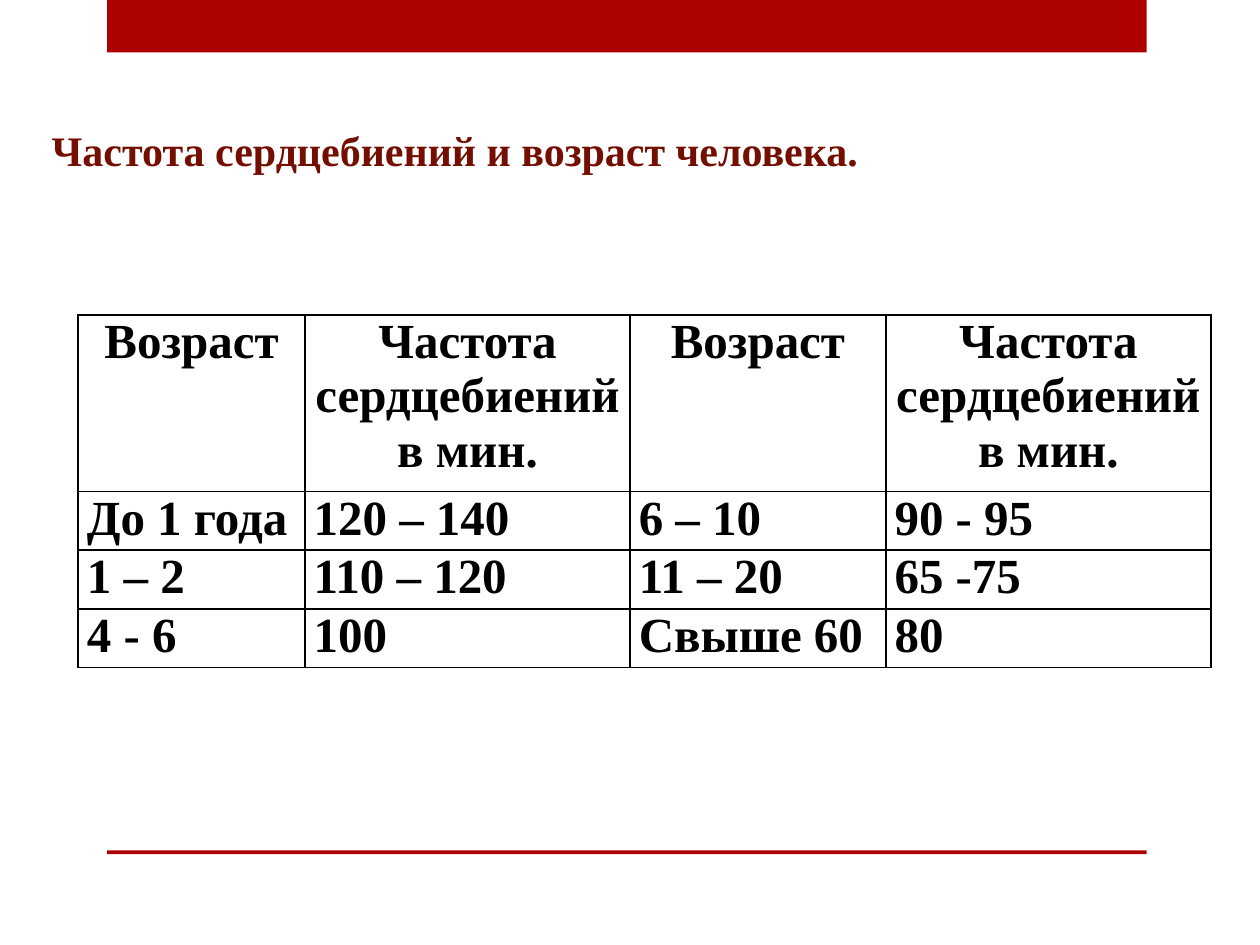
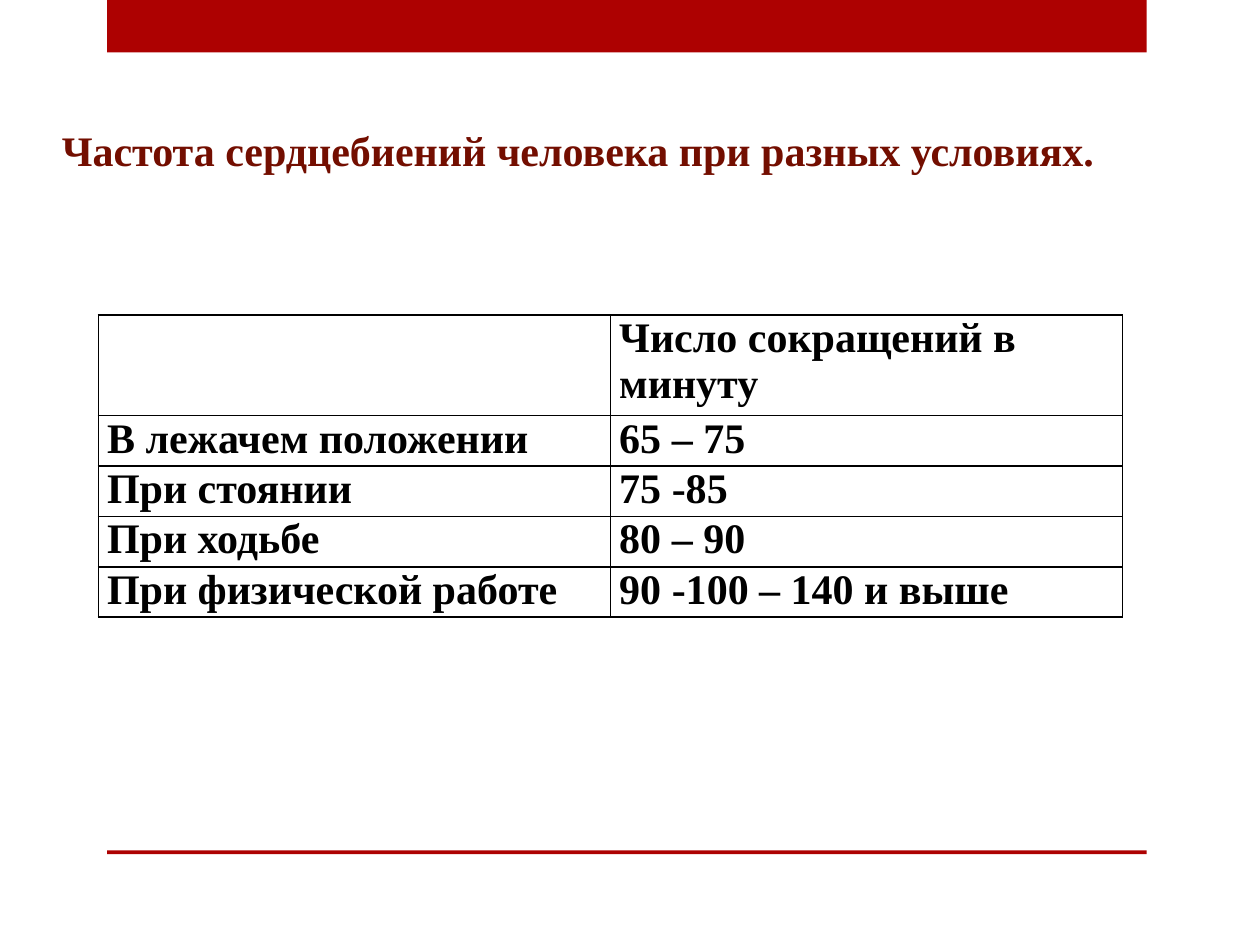
from lxml.etree import SubElement
from pptx import Presentation
from pptx.dml.color import RGBColor as Rgb
from pptx.enum.shapes import MSO_SHAPE as Shape
from pptx.enum.text import MSO_ANCHOR as Anchor, MSO_AUTO_SIZE as Auto, PP_ALIGN as Align
from pptx.oxml import parse_xml
from pptx.oxml.ns import nsdecls, qn
from pptx.util import Inches, Pt

FONT = "Times New Roman"
RED, BROWN, BLACK = "AD0101", "730E00", "000000"
BANDS = [(0, 5.55), (90, 0.4)]  # top and height, in rows

# Each slide: title, its left and width; table left, column widths,
# text size, lines in the header, header alignment, cells
SLIDES = [
    ("Частота сердцебиений и возраст человека.", 3.1, 66.4,
     6.2, [18, 25.8, 20.3, 25.8], 28, 3, Align.CENTER, [
         ["Возраст", "Частота сердцебиений в мин."] * 2,
         ["До 1 года", "120 – 140", "6 – 10", "90 - 95"],
         ["1 – 2", "110 – 120", "11 – 20", "65 -75"],
         ["4 - 6", "100", "Свыше 60", "80"]]),
    ("Частота сердцебиений человека при разных условиях.", 3.9, 86.7,
     7.8, [40.65, 40.65], 24, 2, Align.LEFT, [
         ["", "Число сокращений в минуту"],
         ["В лежачем положении", "65 – 75"],
         ["При стоянии", "75 -85"],
         ["При ходьбе", "80 – 90"],
         ["При физической работе", "90 -100 – 140 и выше"]]),
]


def write(par, text, size, tint, align):
    par.alignment = align
    run = par.add_run()
    run.text = text
    font = run.font
    font.name, font.size, font.bold = FONT, Pt(size), True
    font.color.rgb = Rgb.from_string(tint)


def frame(cell):
    """Draw a thin black line on all four sides of a cell."""
    props = cell._tc.get_or_add_tcPr()
    for spot, side in enumerate(("lnL", "lnR", "lnT", "lnB")):
        line = parse_xml(f'<a:{side} {nsdecls("a")} w="{Pt(1)}"/>')
        fill = SubElement(line, qn("a:solidFill"))
        SubElement(fill, qn("a:srgbClr")).set("val", BLACK)
        props.insert(spot, line)


deck = Presentation()
deck.slide_width, deck.slide_height = Inches(10), Inches(7.5)
# Grid of 100 columns and 100 rows
COL, ROW = deck.slide_width / 100, deck.slide_height / 100

for head, left, wide, start, cols, size, lines, align, cells in SLIDES:
    slide = deck.slides.add_slide(deck.slide_layouts[5])

    for top, high in BANDS:
        band = slide.shapes.add_shape(
            Shape.RECTANGLE, int(8.5 * COL), int(top * ROW), int(82.5 * COL), int(high * ROW))
        band.shadow.inherit = False
        band.fill.solid()
        band.fill.fore_color.rgb = Rgb.from_string(RED)
        band.line.fill.background()

    title = slide.shapes.title
    title.left, title.top = int(left * COL), int(12.5 * ROW)
    title.width, title.height = int(wide * COL), int(6.7 * ROW)
    text = title.text_frame
    text.auto_size, text.word_wrap = Auto.NONE, True
    text.vertical_anchor = Anchor.MIDDLE
    write(text.paragraphs[0], head, size=24, tint=BROWN, align=Align.LEFT)

    step = Pt(size * 1.2)
    table = slide.shapes.add_table(
        len(cells), len(cols), int(start * COL), int(deck.slide_height / 3),
        int(sum(cols) * COL), step * (len(cells) + lines - 1)).table
    table.first_row = table.horz_banding = False
    for col, span in zip(table.columns, cols):
        col.width = int(span * COL)
    for r, words in enumerate(cells):
        table.rows[r].height = step if r else step * lines
        for c, word in enumerate(words):
            cell = table.cell(r, c)
            cell.fill.background()
            frame(cell)
            cell.margin_left = cell.margin_right = Inches(0.07)
            cell.margin_top = cell.margin_bottom = 0
            if word:
                write(cell.text_frame.paragraphs[0], word, size, BLACK,
                      Align.LEFT if r else align)

deck.save("out.pptx")
